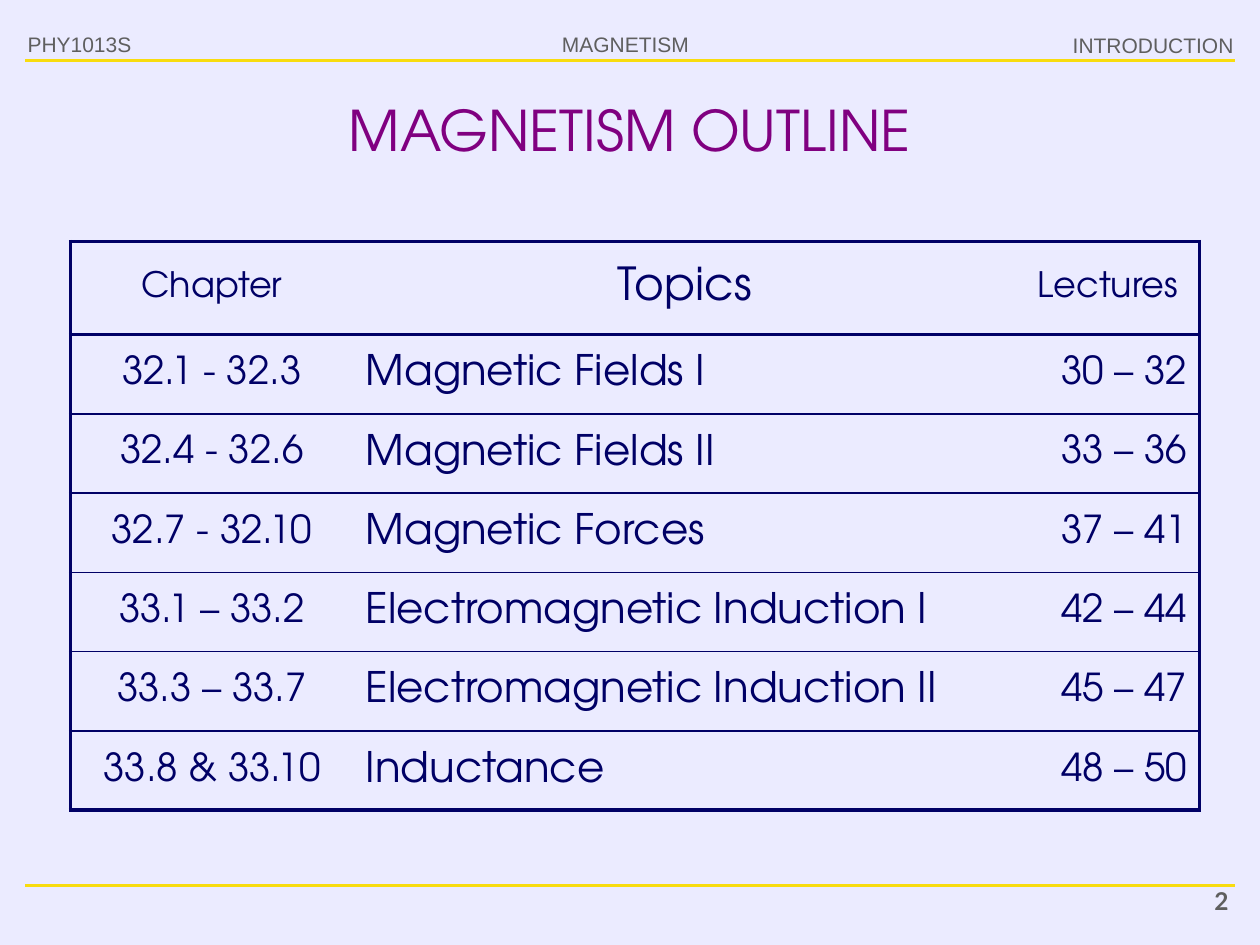
from lxml import etree
from pptx import Presentation
from pptx.dml.color import RGBColor
from pptx.enum.shapes import MSO_CONNECTOR
from pptx.enum.text import MSO_ANCHOR, PP_ALIGN
from pptx.oxml.ns import qn
from pptx.util import Pt

LEFT, CENTER, RIGHT = PP_ALIGN.LEFT, PP_ALIGN.CENTER, PP_ALIGN.RIGHT
MIDDLE = MSO_ANCHOR.MIDDLE
STRAIGHT = MSO_CONNECTOR.STRAIGHT

COLORS = {
    "background": "EBEBFF",
    "rule": "F8DC0E",
    "label": "5F5F5F",
    "title": "800080",
    "table": "000066",
}
DISPLAY_FONT = "TeX Gyre Adventor"

TITLE = "MAGNETISM OUTLINE"
LABELS = [
    ("PHY1013S", (8.64, 14.4, 84.96, 23.04), LEFT, "Arial", 12, False),
    ("MAGNETISM", (313.92, 14.4, 87.12, 21.6), CENTER, "Arial", 12, False),
    ("INTRODUCTION", (601.92, 15.12, 110.16, 20.88), RIGHT, "Arial", 12, False),
    ("2", (635.04, 502.56, 74.16, 26.64), RIGHT, "Lato", 14, True),
]
RULE_HEIGHTS = [34.5, 506.16]
RULE_LEFT, RULE_RIGHT = 14.4, 705.6

OUTLINE = [
    ("Chapter", "Topics", "Lectures"),
    ("32.1 - 32.3", "Magnetic Fields I", "30 – 32"),
    ("32.4 - 32.6", "Magnetic Fields II", "33 – 36"),
    ("32.7 - 32.10", "Magnetic Forces", "37 – 41"),
    ("33.1 – 33.2", "Electromagnetic Induction I", "42 – 44"),
    ("33.3 – 33.7", "Electromagnetic Induction II", "45 – 47"),
    ("33.8 & 33.10", "Inductance", "48 – 50"),
]
TABLE_LEFT, TABLE_TOP = 40.32, 138
COLUMN_WIDTHS = [161.5, 379, 104.5]
HEADER_HEIGHT, TOPIC_HEIGHT = 53.2, 45.3
HEADER_SIZES = [20, 26, 20]
TOPIC_SIZES = [22, 24, 22]
TOPIC_ALIGNMENTS = [CENTER, LEFT, RIGHT]
FRAME_WIDTH, DIVIDER_WIDTH = 2.25, 1


def color(name):
    return RGBColor.from_string(COLORS[name])


def write(frame, text, align, font, size, color_name, bold=False):
    paragraph = frame.paragraphs[0]
    paragraph.alignment = align
    run = paragraph.add_run()
    run.text = text
    run.font.name = font
    run.font.size = Pt(size)
    run.font.bold = bold
    run.font.color.rgb = color(color_name)


def set_borders(cell, widths):
    properties = cell._tc.get_or_add_tcPr()
    for position, (side, width) in enumerate(widths.items()):
        border = etree.Element(qn(f"a:ln{side}"), w=str(Pt(width)))
        if width:
            fill = etree.SubElement(border, qn("a:solidFill"))
            etree.SubElement(fill, qn("a:srgbClr"), val=COLORS["table"])
        else:
            etree.SubElement(border, qn("a:noFill"))
        properties.insert(position, border)


def add_rule(slide, height):
    rule = slide.shapes.add_connector(
        STRAIGHT, Pt(RULE_LEFT), Pt(height), Pt(RULE_RIGHT), Pt(height))
    rule.line.color.rgb = color("rule")
    rule.line.width = Pt(1.75)
    etree.SubElement(rule._element.spPr, qn("a:effectLst"))


def add_label(slide, text, box, align, font, size, bold):
    label = slide.shapes.add_textbox(*map(Pt, box))
    label.text_frame.word_wrap = True
    write(label.text_frame, text, align, font, size, "label", bold)


def add_title(slide):
    title = slide.shapes.title
    title.left, title.top, title.width, title.height = map(Pt, (36, 51.84, 648, 43.92))
    title.text_frame.vertical_anchor = MIDDLE
    write(title.text_frame, TITLE, CENTER, DISPLAY_FONT, 32, "title")


def add_outline(slide):
    heights = [HEADER_HEIGHT] + [TOPIC_HEIGHT] * (len(OUTLINE) - 1)
    table = slide.shapes.add_table(
        len(heights), len(COLUMN_WIDTHS), Pt(TABLE_LEFT), Pt(TABLE_TOP),
        Pt(sum(COLUMN_WIDTHS)), Pt(sum(heights))).table
    table.first_row = table.horz_banding = False
    for column, width in zip(table.columns, COLUMN_WIDTHS):
        column.width = Pt(width)
    last_row, last_column = len(heights) - 1, len(COLUMN_WIDTHS) - 1
    for r, entry in enumerate(OUTLINE):
        table.rows[r].height = Pt(heights[r])
        for c, text in enumerate(entry):
            cell = table.cell(r, c)
            cell.vertical_anchor = MIDDLE
            cell.fill.background()
            align = CENTER if r == 0 else TOPIC_ALIGNMENTS[c]
            size = (TOPIC_SIZES if r else HEADER_SIZES)[c]
            write(cell.text_frame, text, align, DISPLAY_FONT, size, "table")
            set_borders(cell, {
                "L": FRAME_WIDTH if c == 0 else 0,
                "R": FRAME_WIDTH if c == last_column else 0,
                "T": FRAME_WIDTH if r <= 1 else DIVIDER_WIDTH,
                "B": FRAME_WIDTH if r in (0, last_row) else DIVIDER_WIDTH,
            })


def main():
    presentation = Presentation()
    presentation.slide_width, presentation.slide_height = Pt(720), Pt(540)
    slide = presentation.slides.add_slide(presentation.slide_layouts[5])
    slide.background.fill.solid()
    slide.background.fill.fore_color.rgb = color("background")
    for height in RULE_HEIGHTS:
        add_rule(slide, height)
    for label in LABELS:
        add_label(slide, *label)
    add_title(slide)
    add_outline(slide)
    presentation.save("out.pptx")


if __name__ == "__main__":
    main()
